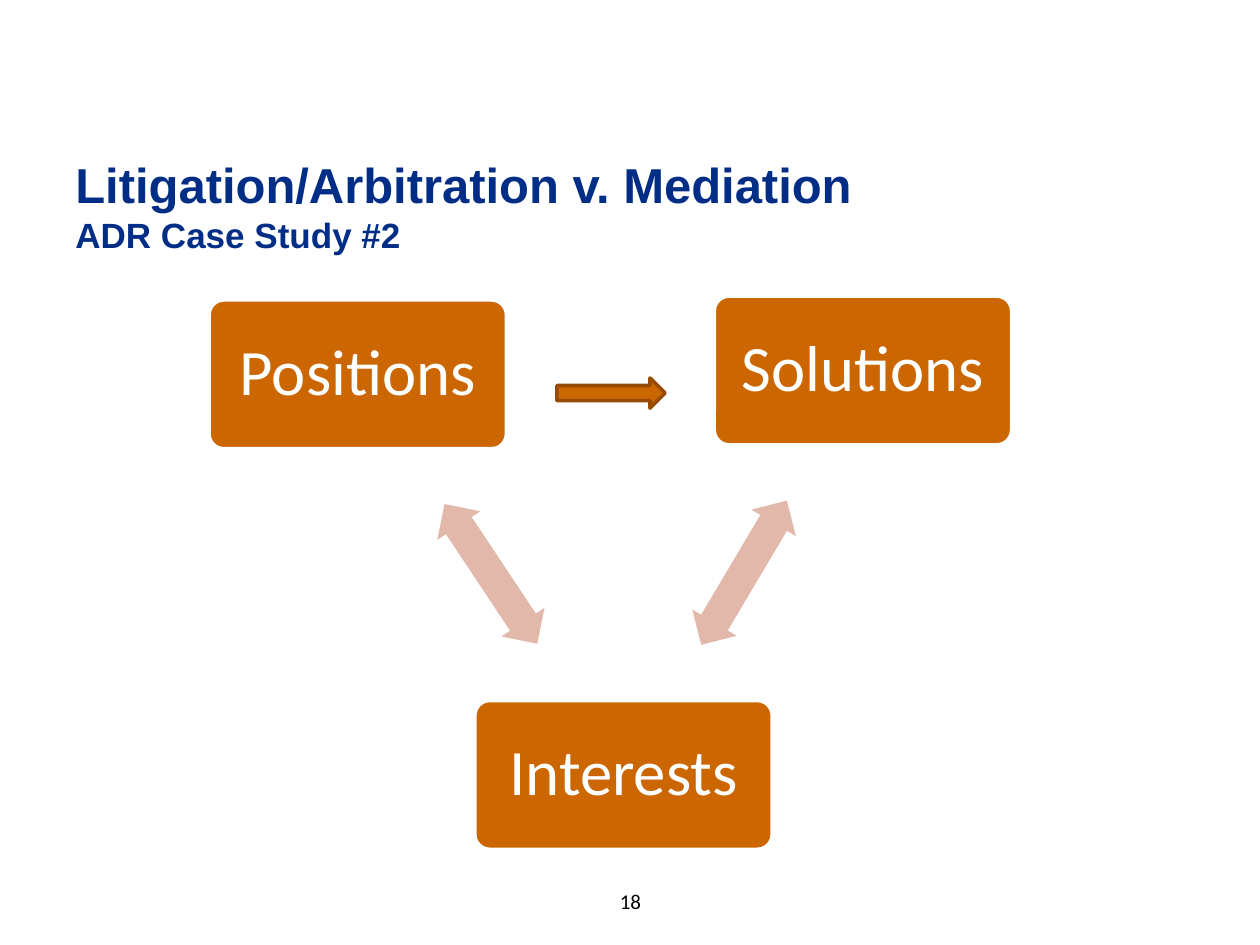
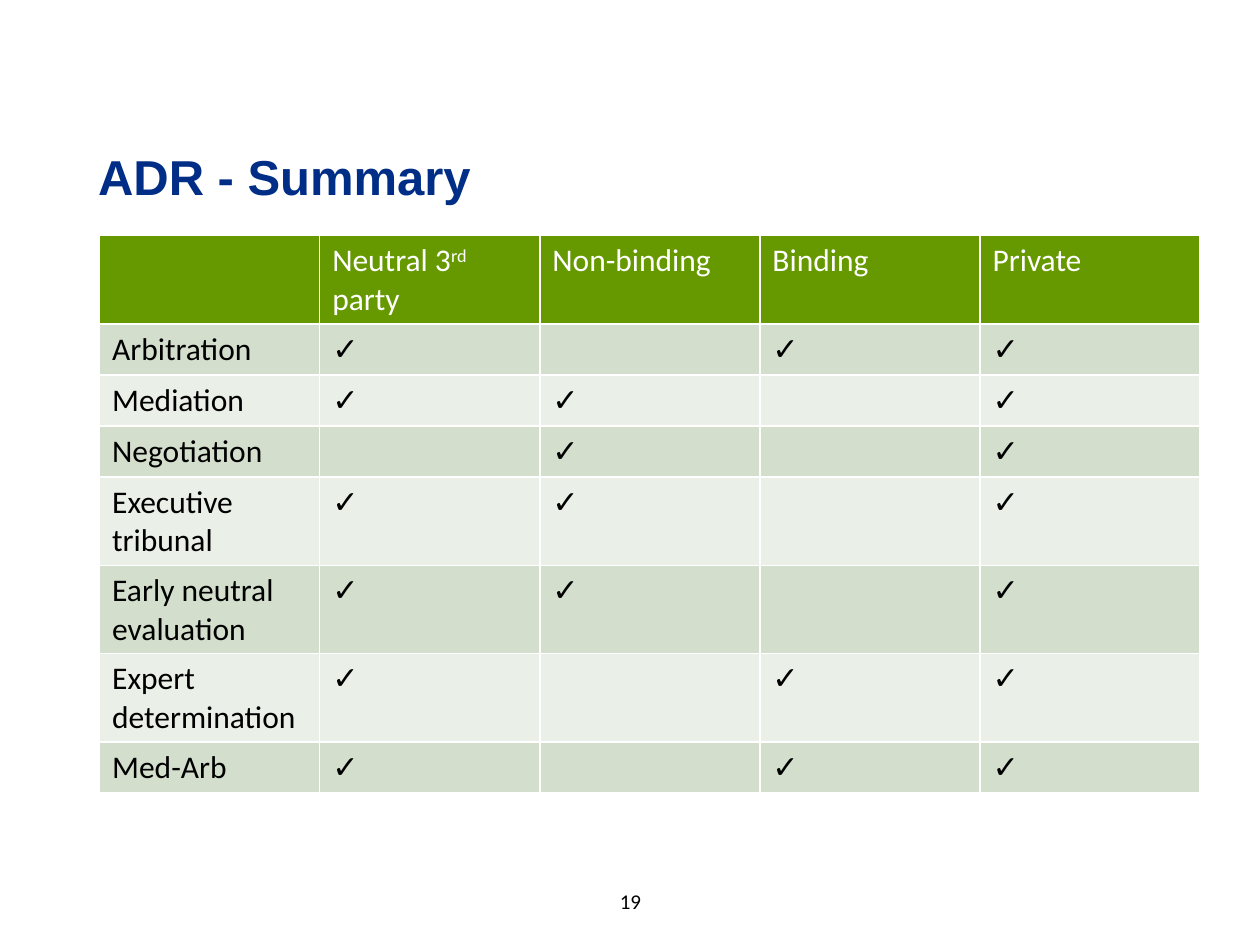
from lxml.etree import SubElement as Sub
from pptx import Presentation
from pptx.dml.color import RGBColor as RGB
from pptx.enum.shapes import MSO_SHAPE as Kind
from pptx.enum.text import MSO_ANCHOR as Anchor, PP_ALIGN as Align
from pptx.oxml.ns import qn
from pptx.util import Pt

NAVY = RGB(0x00, 0x2D, 0x86)
ORANGE = RGB(0xCC, 0x66, 0x00)
BROWN = RGB(0x97, 0x4B, 0x00)
PINK = RGB(0xE2, 0xB8, 0xAB)
GREEN = RGB(0x66, 0x99, 0x00)
BANDS = RGB(0xEA, 0xEF, 0xE7), RGB(0xD3, 0xDE, 0xCC)
WHITE = RGB(0xFF, 0xFF, 0xFF)
BLACK = RGB(0x00, 0x00, 0x00)

HEADS = ["", ["Neutral 3", "^rd", " party"], "Non-binding", "Binding", "Private"]
# Each method is followed by the columns that get a tick.
METHODS = [
    ("Arbitration", {1, 3, 4}),
    ("Mediation", {1, 2, 4}),
    ("Negotiation", {2, 4}),
    ("Executive tribunal", {1, 2, 4}),
    ("Early neutral evaluation", {1, 2, 4}),
    ("Expert determination", {1, 3, 4}),
    ("Med-Arb", {1, 3, 4}),
]


class Deck:
    TITLE = dict(name="Arial", size=Pt(28), bold=True)
    SUB = dict(TITLE, size=Pt(20))
    LABEL = dict(name="Calibri", size=Pt(37))
    CELL = dict(name="Calibri", size=Pt(18))
    PAGE = dict(name="Calibri", size=Pt(12))

    def __init__(self):
        self.prs = Presentation()
        self.prs.slide_width, self.prs.slide_height = Pt(720), Pt(540)

    def page(self, num):
        self.slide = self.prs.slides.add_slide(self.prs.slide_layouts[6])
        para = self.box(246.2, 500.4, 228.2, 28.8).paragraphs[0]
        para.alignment = Align.CENTER
        self.words(para, str(num), self.PAGE, BLACK)

    def words(self, para, text, style, color):
        """Add text, a string or a list of runs; a leading ^ makes a run superscript."""
        for part in [text] if isinstance(text, str) else text:
            run = para.add_run()
            run.text = part.lstrip("^")
            for key, value in style.items():
                setattr(run.font, key, value)
            run.font.color.rgb = color
            if part.startswith("^"):
                run._r.get_or_add_rPr().set("baseline", "30000")

    def box(self, x, y, w, h):
        frame = self.slide.shapes.add_textbox(Pt(x), Pt(y), Pt(w), Pt(h)).text_frame
        frame.word_wrap = True
        frame.vertical_anchor = Anchor.MIDDLE
        return frame

    def title(self, x, y, text, sub=None):
        frame = self.box(x, y, 648, 66.2)
        self.words(frame.paragraphs[0], text, self.TITLE, NAVY)
        if sub:
            self.words(frame.add_paragraph(), sub, self.SUB, NAVY)

    def shape(self, kind, x, y, w, h, fill, line=None, adj=(), turn=0):
        shape = self.slide.shapes.add_shape(kind, Pt(x), Pt(y), Pt(w), Pt(h))
        shape.shadow.inherit = False
        shape.rotation = turn
        shape.fill.solid()
        shape.fill.fore_color.rgb = fill
        if line:
            shape.line.color.rgb = line
            shape.line.width = Pt(2)
        else:
            shape.line.fill.background()
        for i, value in enumerate(adj):
            shape.adjustments[i] = value
        return shape

    def node(self, x, y, text):
        shape = self.shape(Kind.ROUNDED_RECTANGLE, x, y, 169.9, 85, ORANGE, WHITE, [0.1])
        frame = shape.text_frame
        frame.word_wrap = True
        frame.vertical_anchor = Anchor.MIDDLE
        for side in ("left", "top", "right", "bottom"):
            setattr(frame, f"margin_{side}", Pt(10.8))
        para = frame.paragraphs[0]
        para.alignment = Align.CENTER
        para.line_spacing = 0.9
        self.words(para, text, self.LABEL, WHITE)

    def link(self, x, y, turn):
        self.shape(Kind.LEFT_RIGHT_ARROW, x, y, 95.8, 29.5, PINK, adj=[0.6, 0.5], turn=turn)

    def cell(self, cell, text, fill, color):
        props = cell._tc.get_or_add_tcPr()
        for side in ("lnL", "lnR", "lnT", "lnB"):
            line = Sub(props, qn(f"a:{side}"), w=str(Pt(1)))
            Sub(Sub(line, qn("a:solidFill")), qn("a:srgbClr"), val=str(WHITE))
        cell.fill.solid()
        cell.fill.fore_color.rgb = fill
        if text:
            self.words(cell.text_frame.paragraphs[0], text, self.CELL, color)

    def table(self, x, y, wide, high, rows):
        cols = len(rows[0])
        grid = self.slide.shapes.add_table(
            len(rows), cols, Pt(x), Pt(y), Pt(wide * cols), Pt(high * len(rows))).table
        for col in grid.columns:
            col.width = Pt(wide)
        for r, row in enumerate(rows):
            grid.rows[r].height = Pt(high)
            fill, color = (BANDS[r % 2], BLACK) if r else (GREEN, WHITE)
            for c, text in enumerate(row):
                self.cell(grid.cell(r, c), text, fill, color)


def main():
    deck = Deck()

    deck.page(18)
    deck.title(36, 84.2, "Litigation/Arbitration v. Mediation", "ADR Case Study #2")
    deck.node(271.4, 400.3, "Interests")
    deck.link(377.3, 312.5, 300.7)
    deck.node(408.2, 169.2, "Solutions")
    deck.node(119.5, 171.4, "Positions")
    deck.link(232.6, 313.2, 56.4)
    deck.shape(Kind.RIGHT_ARROW, 318.2, 216, 61.9, 17.3, ORANGE, BROWN)

    deck.page(19)
    deck.title(49, 67.7, "ADR - Summary")
    rows = [[name] + ["✓" if c in ticks else "" for c in range(1, len(HEADS))]
            for name, ticks in METHODS]
    deck.table(56.9, 134.6, 125.8, 29.2, [HEADS] + rows)

    deck.prs.save("out.pptx")


if __name__ == "__main__":
    main()
